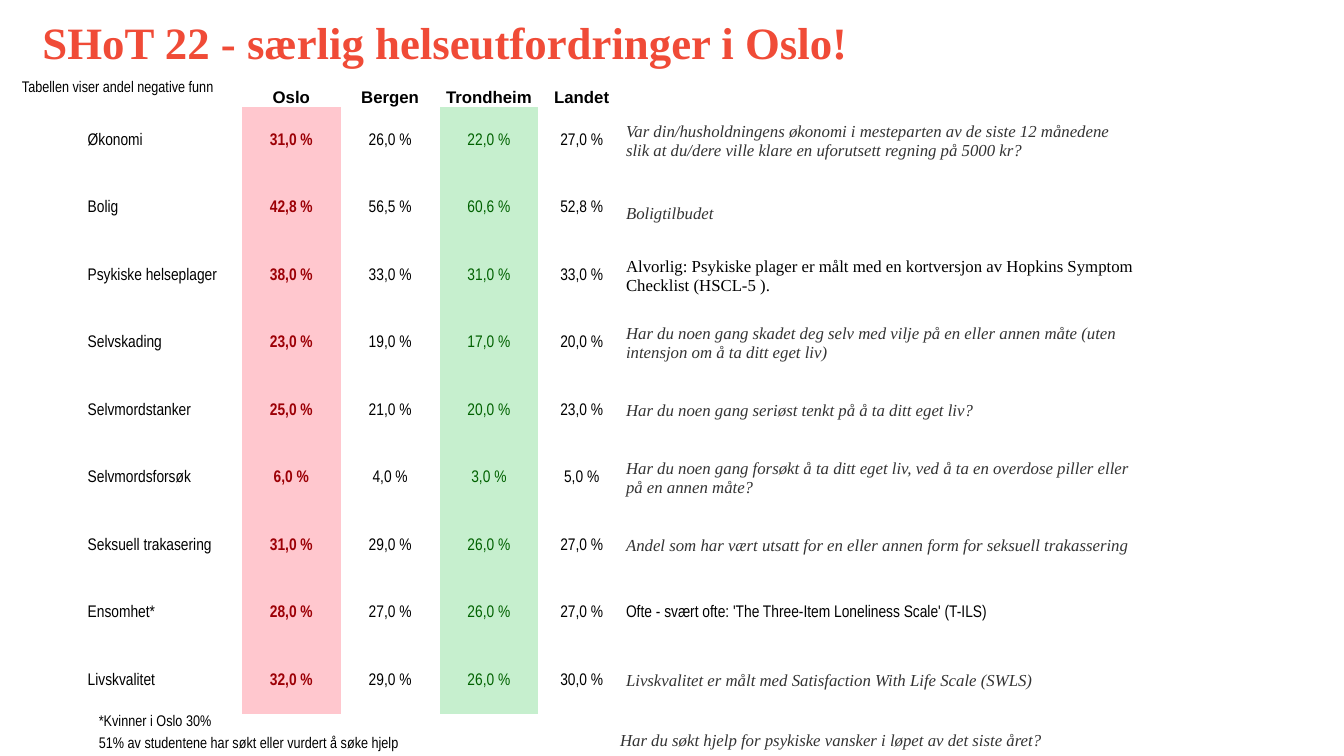
from lxml.etree import SubElement
from pptx import Presentation
from pptx.dml.color import RGBColor
from pptx.enum.text import MSO_ANCHOR as ANCHOR, MSO_AUTO_SIZE as AUTO_SIZE, PP_ALIGN as ALIGN
from pptx.oxml.ns import qn
from pptx.util import Inches, Pt

SERIF, SANS, NARROW = "Times New Roman", "Arial", "Arial Narrow"
BLACK, GREY = "000000", "333333"
PLAIN_STYLE = "{2D5ABB26-0587-4C30-8999-92F81FD0307C}"


def style(para, face, size, color=BLACK, bold=False, italic=False, align=ALIGN.LEFT):
    para.alignment = align
    font = para.font
    font.name, font.size, font.bold, font.italic = face, Pt(size), bold, italic
    font.color.rgb = RGBColor.from_string(color)


def add_plain_table(left, top, widths, heights):
    """Add a table without borders or fills, with tight cells and small empty lines."""
    frame = slide.shapes.add_table(len(heights), len(widths), Inches(left), Inches(top),
                                   Inches(sum(widths)), Inches(sum(heights)))
    table = frame.table
    table.first_row = table.horz_banding = False
    table._tbl.tblPr.find(qn("a:tableStyleId")).text = PLAIN_STYLE
    for column, width in zip(table.columns, widths):
        column.width = Inches(width)
    for row, height in zip(table.rows, heights):
        row.height = Inches(height)
    for cell in table.iter_cells():
        cell.fill.background()
        cell.margin_left = cell.margin_right = cell.margin_top = Inches(0.01)
        cell.margin_bottom = 0
        cell.vertical_anchor = ANCHOR.MIDDLE
        SubElement(cell.text_frame.paragraphs[0]._p, qn("a:endParaRPr"), sz="1100")
    return table


deck = Presentation()
deck.slide_width, deck.slide_height = Inches(13.33), Inches(7.5)
slide = deck.slides.add_slide(deck.slide_layouts[5])

# Title
title = slide.shapes.title
title.left, title.top, title.width, title.height = map(Inches, (0.32, 0.1, 11.38, 1.54))
title.text_frame.text = "SHoT 22 - særlig helseutfordringer i Oslo!"
title.text_frame.vertical_anchor = ANCHOR.TOP
title.text_frame.auto_size = AUTO_SIZE.NONE
style(title.text_frame.paragraphs[0], SERIF, 32, "F04B37", bold=True)

# Footnotes below the main table
footnotes = add_plain_table(0.97, 7.03, [1.49, 0.95, 0.95, 0.95, 0.83, 4.92], [0.21, 0.22])
footnotes.cell(1, 0).merge(footnotes.cell(1, 2))
for row, note in enumerate(["*Kvinner i Oslo 30%",
                            "51% av studentene har søkt eller vurdert å søke hjelp"]):
    cell = footnotes.cell(row, 0)
    cell.text = note
    cell.vertical_anchor = ANCHOR.BOTTOM
    style(cell.text_frame.paragraphs[0], NARROW, 11)
help_cell = footnotes.cell(1, 5)
help_cell.text = "Har du søkt hjelp for psykiske vansker i løpet av det siste året?"
style(help_cell.text_frame.paragraphs[0], SERIF, 12, GREY, italic=True)

# Main table: topic, share per city, question asked
QUOTE = (SERIF, GREY, True)
topics = [
    ("Økonomi", "31,0 26,0 22,0 27,0",
     "Var din/husholdningens økonomi i mesteparten av de siste 12 månedene "
     "slik at du/dere ville klare en uforutsett regning på 5000 kr?", QUOTE),
    ("Bolig", "42,8 56,5 60,6 52,8", "Boligtilbudet", QUOTE),
    ("Psykiske helseplager", "38,0 33,0 31,0 33,0",
     "Alvorlig: Psykiske plager er målt med en kortversjon av "
     "Hopkins Symptom Checklist (HSCL-5 ).", (SERIF, BLACK, False)),
    ("Selvskading", "23,0 19,0 17,0 20,0",
     "Har du noen gang skadet deg selv med vilje på en eller annen måte "
     "(uten intensjon om å ta ditt eget liv)", QUOTE),
    ("Selvmordstanker", "25,0 21,0 20,0 23,0",
     "Har du noen gang seriøst tenkt på å ta ditt eget liv?", QUOTE),
    ("Selvmordsforsøk", "6,0 4,0 3,0 5,0",
     "Har du noen gang forsøkt å ta ditt eget liv, ved å ta en overdose "
     "piller eller på en annen måte?", QUOTE),
    ("Seksuell trakasering", "31,0 29,0 26,0 27,0",
     "Andel som har vært utsatt for en eller annen form for seksuell trakassering", QUOTE),
    ("Ensomhet*", "28,0 27,0 26,0 27,0",
     "Ofte - svært ofte: 'The Three-Item Loneliness Scale' (T-ILS)", (NARROW, BLACK, False)),
    ("Livskvalitet", "32,0 29,0 26,0 30,0",
     "Livskvalitet er målt med Satisfaction With Life Scale (SWLS)", QUOTE),
]
# Place, text colour, column fill
places = [("Oslo", "9C0006", "FFC7CE"), ("Bergen", BLACK, None),
          ("Trondheim", "006100", "C6EFCE"), ("Landet", BLACK, None)]

findings = add_plain_table(0.42, 0.84, [0.44, 1.54, 0.98, 0.98, 0.98, 0.86, 5.09],
                           [0.22] + [0.67] * len(topics))
for column, (place, color, fill) in enumerate(places, start=2):
    header = findings.cell(0, column)
    header.text = place
    header.vertical_anchor = ANCHOR.BOTTOM
    style(header.text_frame.paragraphs[0], SANS, 12, bold=True, align=ALIGN.CENTER)
    for row, (_, shares, _, _) in enumerate(topics, start=1):
        cell = findings.cell(row, column)
        cell.text = shares.split()[column - 2] + " %"
        style(cell.text_frame.paragraphs[0], NARROW, 12, color,
              bold=place == "Oslo", align=ALIGN.CENTER)
        if fill:
            cell.fill.solid()
            cell.fill.fore_color.rgb = RGBColor.from_string(fill)

for row, (topic, _, question, (face, color, italic)) in enumerate(topics, start=1):
    label, detail = findings.cell(row, 1), findings.cell(row, 6)
    label.text, detail.text = topic, question
    style(label.text_frame.paragraphs[0], NARROW, 12)
    style(detail.text_frame.paragraphs[0], face, 12, color, italic=italic)
    if topic == "Bolig":
        detail.vertical_anchor = ANCHOR.BOTTOM
        detail.margin_bottom = Inches(0.19)

# Caption above the topics
caption = slide.shapes.add_textbox(Inches(0.12), Inches(0.66), Inches(2.36), Inches(0.4))
caption.text_frame.word_wrap = True
caption.text_frame.vertical_anchor = ANCHOR.MIDDLE
caption.text_frame.text = "Tabellen viser andel negative funn"
style(caption.text_frame.paragraphs[0], NARROW, 11)

deck.save("out.pptx")
